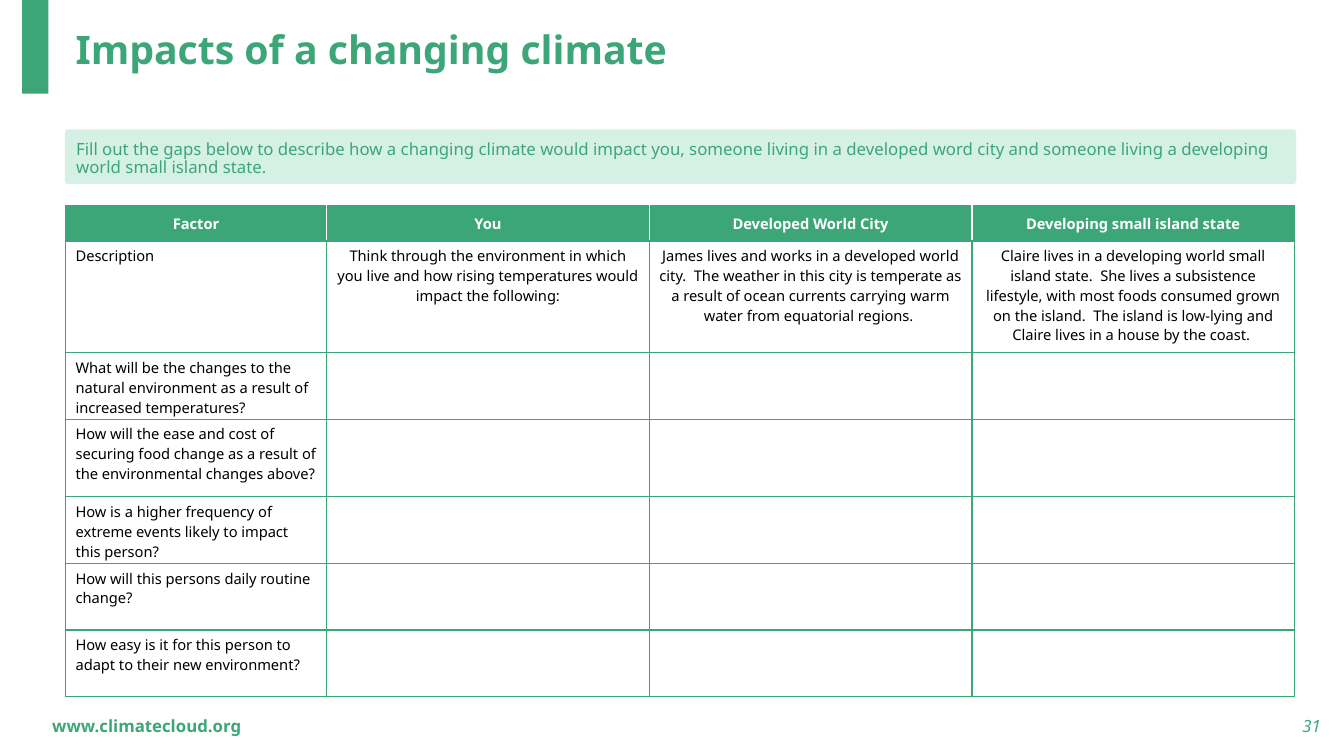
from dataclasses import dataclass

from lxml import etree
from pptx import Presentation
from pptx.dml.color import RGBColor
from pptx.enum.shapes import MSO_SHAPE
from pptx.enum.text import MSO_ANCHOR, MSO_AUTO_SIZE, PP_ALIGN
from pptx.oxml.ns import qn
from pptx.util import Inches, Pt

LEFT, CENTER, RIGHT = PP_ALIGN.LEFT, PP_ALIGN.CENTER, PP_ALIGN.RIGHT
TOP, MIDDLE = MSO_ANCHOR.TOP, MSO_ANCHOR.MIDDLE
RECT, ROUND = MSO_SHAPE.RECTANGLE, MSO_SHAPE.ROUNDED_RECTANGLE
NO_FIT, SHRINK = MSO_AUTO_SIZE.NONE, MSO_AUTO_SIZE.TEXT_TO_FIT_SHAPE


@dataclass(frozen=True)
class Theme:
    font: str = "Noto Sans"
    green: str = "3CA679"
    mint: str = "D5F0E5"
    white: str = "FFFFFF"
    black: str = "000000"
    title: float = 28
    body: float = 12
    cell: float = 10.5


@dataclass(frozen=True)
class Box:
    left: float
    top: float
    width: float
    height: float

    def spans(self) -> tuple:
        return tuple(map(Inches, (self.left, self.top, self.width, self.height)))


@dataclass(frozen=True)
class Style:
    size: float
    color: str
    bold: bool = False
    italic: bool = False
    align: PP_ALIGN = LEFT


@dataclass(frozen=True)
class Note:
    box: Box
    text: str
    style: Style


THEME = Theme()
HEAD = Style(THEME.cell, THEME.white, bold=True, align=CENTER)
FACTOR = Style(THEME.cell, THEME.black)
PERSON = Style(THEME.cell, THEME.black, align=CENTER)

BAR = Box(0.22, 0, 0.26, 0.93)
TITLE = Note(Box(0.65, 0.13, 10.73, 0.76), "Impacts of a changing climate",
             Style(THEME.title, THEME.green, bold=True))
TASK = Note(
    Box(0.65, 1.29, 12.2, 0.53),
    "Fill out the gaps below to describe how a changing climate would impact "
    "you, someone living in a developed word city and someone living a "
    "developing world small island state.",
    Style(THEME.body, THEME.green))
FOOTER = [
    Note(Box(10.2, 7, 3, 0.4), "31",
         Style(THEME.body, THEME.green, italic=True, align=RIGHT)),
    Note(Box(0.42, 7, 4.5, 0.4), "www.climatecloud.org",
         Style(THEME.body, THEME.green, bold=True)),
]

GRID = Box(0.65, 2.04, 12.2, 4.87)
COLS = [2.59, 3.2, 3.2, 3.2]
HEIGHTS = [0.35, 1.11, 0.66, 0.77, 0.66, 0.66, 0.66]
ROWS = [
    ["Factor", "You", "Developed World City", "Developing small island state"],
    ["Description",
     "Think through the environment in which you live and how rising "
     "temperatures would impact the following:",
     "James lives and works in a developed world city.  The weather in this "
     "city is temperate as a result of ocean currents carrying warm water "
     "from equatorial regions. ",
     "Claire lives in a developing world small island state.  She lives a "
     "subsistence lifestyle, with most foods consumed grown on the island.  "
     "The island is low-lying and Claire lives in a house by the coast. "],
    ["What will be the changes to the natural environment as a result of "
     "increased temperatures?"],
    ["How will the ease and cost of securing food change as a result of the "
     "environmental changes above?"],
    ["How is a higher frequency of extreme events likely to impact this person?"],
    ["How will this persons daily routine change?"],
    ["How easy is it for this person to adapt to their new environment?"],
]


def write(frame, text: str, style: Style) -> None:
    frame.word_wrap = True
    para = frame.paragraphs[0]
    para.alignment = style.align
    run = para.add_run()
    run.text = text
    font = run.font
    font.name, font.size = THEME.font, Pt(style.size)
    font.bold, font.italic = style.bold, style.italic
    font.color.rgb = RGBColor.from_string(style.color)


def add_block(slide, kind: MSO_SHAPE, box: Box, color: str):
    block = slide.shapes.add_shape(kind, *box.spans())
    block.shadow.inherit = False
    block.fill.solid()
    block.fill.fore_color.rgb = RGBColor.from_string(color)
    block.line.fill.background()
    return block


def add_title(slide, note: Note) -> None:
    title = slide.shapes.title
    title.left, title.top, title.width, title.height = note.box.spans()
    frame = title.text_frame
    frame.auto_size = NO_FIT
    frame.vertical_anchor = MIDDLE
    write(frame, note.text, note.style)
    frame.paragraphs[0].line_spacing = 0.9


def add_task(slide, note: Note) -> None:
    panel = add_block(slide, ROUND, note.box, THEME.mint)
    panel.adjustments[0] = 0.05
    panel.line.color.rgb = RGBColor.from_string(THEME.mint)
    panel.line.width = Pt(1)
    frame = panel.text_frame
    frame.vertical_anchor = MIDDLE
    write(frame, note.text, note.style)
    frame.auto_size = SHRINK


def add_note(slide, note: Note) -> None:
    frame = slide.shapes.add_textbox(*note.box.spans()).text_frame
    frame.vertical_anchor = MIDDLE
    write(frame, note.text, note.style)


def set_edges(cell, left: str, right: str) -> None:
    """Rule all four sides, with chosen colours at left and right."""
    props = cell._tc.get_or_add_tcPr()
    edges = {"lnL": left, "lnR": right, "lnT": THEME.green, "lnB": THEME.green}
    for spot, (tag, color) in enumerate(edges.items()):
        line = etree.Element(qn(f"a:{tag}"), w=str(Pt(1)))
        fill = etree.SubElement(line, qn("a:solidFill"))
        etree.SubElement(fill, qn("a:srgbClr"), val=color)
        props.insert(spot, line)


def add_grid(slide) -> None:
    table = slide.shapes.add_table(len(ROWS), len(COLS), *GRID.spans()).table
    table.horz_banding = False
    for col, width in zip(table.columns, COLS):
        col.width = Inches(width)
    for row, height in zip(table.rows, HEIGHTS):
        row.height = Inches(height)
    last = len(COLS) - 1
    for r, texts in enumerate(ROWS):
        for c in range(len(COLS)):
            cell = table.cell(r, c)
            inner = THEME.green if r else THEME.white
            if r:
                cell.fill.background()
            else:
                cell.fill.solid()
                cell.fill.fore_color.rgb = RGBColor.from_string(THEME.green)
            set_edges(cell, inner if c else THEME.green,
                      inner if c < last else THEME.green)
            cell.vertical_anchor = TOP if r else MIDDLE
            if c < len(texts):
                style = HEAD if r == 0 else PERSON if c else FACTOR
                write(cell.text_frame, texts[c], style)


def main() -> None:
    deck = Presentation()
    deck.slide_width, deck.slide_height = Inches(13.33), Inches(7.5)
    slide = deck.slides.add_slide(deck.slide_layouts[5])
    add_block(slide, RECT, BAR, THEME.green)
    add_title(slide, TITLE)
    for note in FOOTER:
        add_note(slide, note)
    add_grid(slide)
    add_task(slide, TASK)
    deck.save("out.pptx")


if __name__ == "__main__":
    main()
